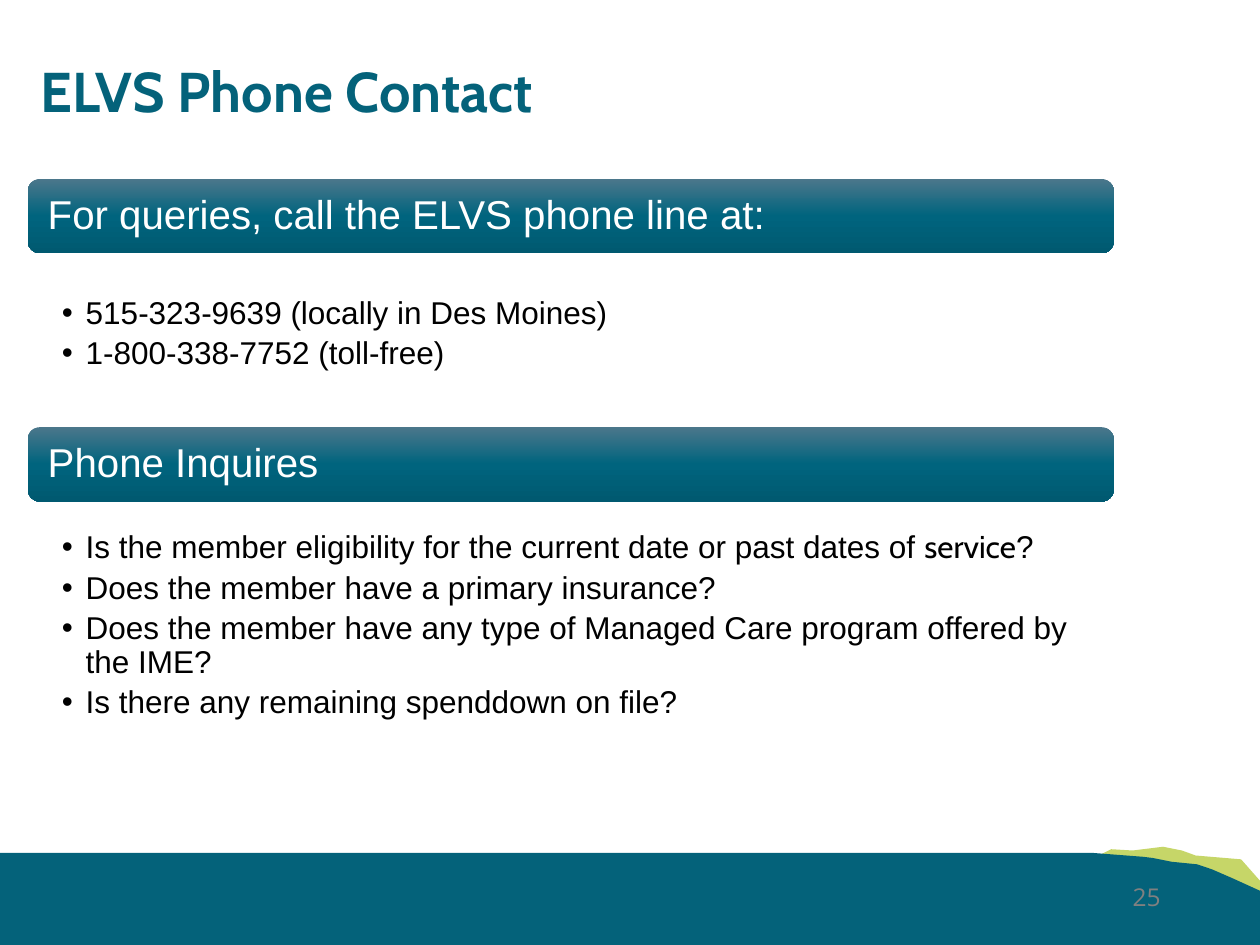
from copy import deepcopy

from pptx import Presentation
from pptx.dml.color import RGBColor
from pptx.enum.shapes import MSO_SHAPE
from pptx.enum.text import MSO_ANCHOR, MSO_AUTO_SIZE, PP_ALIGN
from pptx.oxml.ns import qn
from pptx.util import Inches, Pt

ROUNDED = MSO_SHAPE.ROUNDED_RECTANGLE
MIDDLE, TOP = MSO_ANCHOR.MIDDLE, MSO_ANCHOR.TOP
LEFT, RIGHT = PP_ALIGN.LEFT, PP_ALIGN.RIGHT
NO_FIT = MSO_AUTO_SIZE.NONE

TEAL = RGBColor(0x04, 0x62, 0x7A)
LIME = RGBColor(0xC6, 0xD6, 0x68)
GREY = RGBColor(0x80, 0x80, 0x80)
WHITE = RGBColor(0xFF, 0xFF, 0xFF)
BLACK = RGBColor(0x00, 0x00, 0x00)
BAND_STOPS = [
    (0, RGBColor(0x4B, 0x77, 0x8B)),
    (0.5, RGBColor(0x00, 0x64, 0x7E)),
    (1, RGBColor(0x00, 0x59, 0x70)),
]

COLUMN_LEFT, COLUMN_WIDTH = 0.22, 8.62
BAND_HEIGHT = 0.59
LIME_HILL = [(8.82, 6.74), (8.62, 6.84), (10, 7.11), (10, 6.99), (9.85, 6.82),
             (9.49, 6.79), (9.38, 6.75), (9.23, 6.72), (8.99, 6.75)]
TEAL_GROUND = [(0, 6.77), (8.68, 6.77), (9.07, 6.8), (9.15, 6.81), (9.3, 6.84),
               (9.5, 6.86), (9.62, 6.9), (9.78, 6.97), (10, 7.07), (10, 7.5),
               (0, 7.5)]

SECTIONS = [
    ("For queries, call the ELVS phone line at:", 1.42, 2.33, 0.96, [
        [("515-323-9639 (locally in Des Moines)", "Arial")],
        [("1-800-338-7752 (toll-free)", "Arial")],
    ]),
    ("Phone Inquires", 3.39, 4.19, 1.55, [
        [("Is the member eligibility for the current date or past dates of ", "Arial"),
         ("service", "Cabin"), ("?", "Arial")],
        [("Does the member have a primary insurance?", "Arial")],
        [("Does the member have any type of Managed Care program offered by the IME?",
          "Arial")],
        [("Is there any remaining spenddown on file?", "Arial")],
    ]),
]


def place(shape, left, top, width, height):
    """Move and size a shape, in inches."""
    shape.left, shape.top = Inches(left), Inches(top)
    shape.width, shape.height = Inches(width), Inches(height)


def add_span(para, text, font_name, size, color, bold=False):
    """Add one formatted run to a paragraph."""
    span = para.add_run()
    span.text = text
    span.font.name, span.font.size = font_name, Pt(size)
    span.font.color.rgb, span.font.bold = color, bold


def add_outline(page, points, color):
    """Draw a filled polygon through points given in inches."""
    corners = [(Inches(x), Inches(y)) for x, y in points]
    builder = page.shapes.build_freeform(*corners[0], scale=1.0)
    builder.add_line_segments(corners[1:], close=True)
    shape = builder.convert_to_shape()
    shape.shadow.inherit = False
    shape.fill.solid()
    shape.fill.fore_color.rgb = color
    shape.line.fill.background()


def add_footer(page, number):
    """Draw the landscape footer and the page number."""
    add_outline(page, LIME_HILL, LIME)
    add_outline(page, TEAL_GROUND, TEAL)
    box = page.shapes.add_textbox(Inches(7.06), Inches(6.95), Inches(2.25), Inches(0.4))
    box.text_frame.word_wrap = True
    para = box.text_frame.paragraphs[0]
    para.alignment = RIGHT
    add_span(para, number, "Open Sans", 14, GREY)


def fill_title(title, text):
    """Place and fill the title placeholder."""
    place(title, COLUMN_LEFT, 0.22, COLUMN_WIDTH, 1.06)
    frame = title.text_frame
    frame.auto_size, frame.vertical_anchor = NO_FIT, MIDDLE
    para = frame.paragraphs[0]
    para.alignment, para.line_spacing = LEFT, 0.9
    add_span(para, text, "Cabin", 32, TEAL, bold=True)


def add_band(page, text, top):
    """Draw a gradient heading band across the column."""
    band = page.shapes.add_shape(ROUNDED, Inches(COLUMN_LEFT), Inches(top),
                                 Inches(COLUMN_WIDTH), Inches(BAND_HEIGHT))
    band.shadow.inherit = False
    band.line.fill.background()
    band.fill.gradient()
    band.fill.gradient_angle = 270
    stop_list = band._element.spPr.find(qn("a:gradFill")).find(qn("a:gsLst"))
    stop_list.append(deepcopy(stop_list[-1]))
    for stop, (position, color) in zip(band.fill.gradient_stops, BAND_STOPS):
        stop.position, stop.color.rgb = position, color
    frame = band.text_frame
    frame.word_wrap, frame.vertical_anchor = True, MIDDLE
    frame.margin_left = Inches(0.13)
    para = frame.paragraphs[0]
    para.alignment, para.line_spacing = LEFT, 0.9
    add_span(para, text, "Arial", 23, WHITE)


def fill_list(body, items, top, height):
    """Place a body placeholder and fill it with bulleted items."""
    place(body, COLUMN_LEFT, top, COLUMN_WIDTH, height)
    frame = body.text_frame
    frame.auto_size, frame.vertical_anchor = NO_FIT, TOP
    frame.margin_left, frame.margin_right = Inches(0.27), Inches(0.18)
    frame.margin_top = frame.margin_bottom = Inches(0.03)
    for index, item in enumerate(items):
        para = frame.add_paragraph() if index else frame.paragraphs[0]
        properties = para._p.get_or_add_pPr()
        properties.set("marL", str(Inches(0.19)))
        properties.set("indent", str(-Inches(0.19)))
        bullet = properties.makeelement(qn("a:buChar"), {"char": "•"})
        properties.append(bullet)
        para.line_spacing = 0.9
        para.space_before, para.space_after = Pt(0), Pt(3.6)
        for text, font_name in item:
            add_span(para, text, font_name, 18, BLACK)


def main():
    """Build and save the deck."""
    deck = Presentation()
    deck.slide_width, deck.slide_height = Inches(10), Inches(7.5)
    page = deck.slides.add_slide(deck.slide_layouts.get_by_name("Two Content"))
    title, *bodies = page.placeholders
    add_footer(page, "25")
    fill_title(title, "ELVS Phone Contact")
    for body, (heading, band_top, list_top, height, items) in zip(bodies, SECTIONS):
        add_band(page, heading, band_top)
        fill_list(body, items, list_top, height)
    deck.save("out.pptx")


if __name__ == "__main__":
    main()
